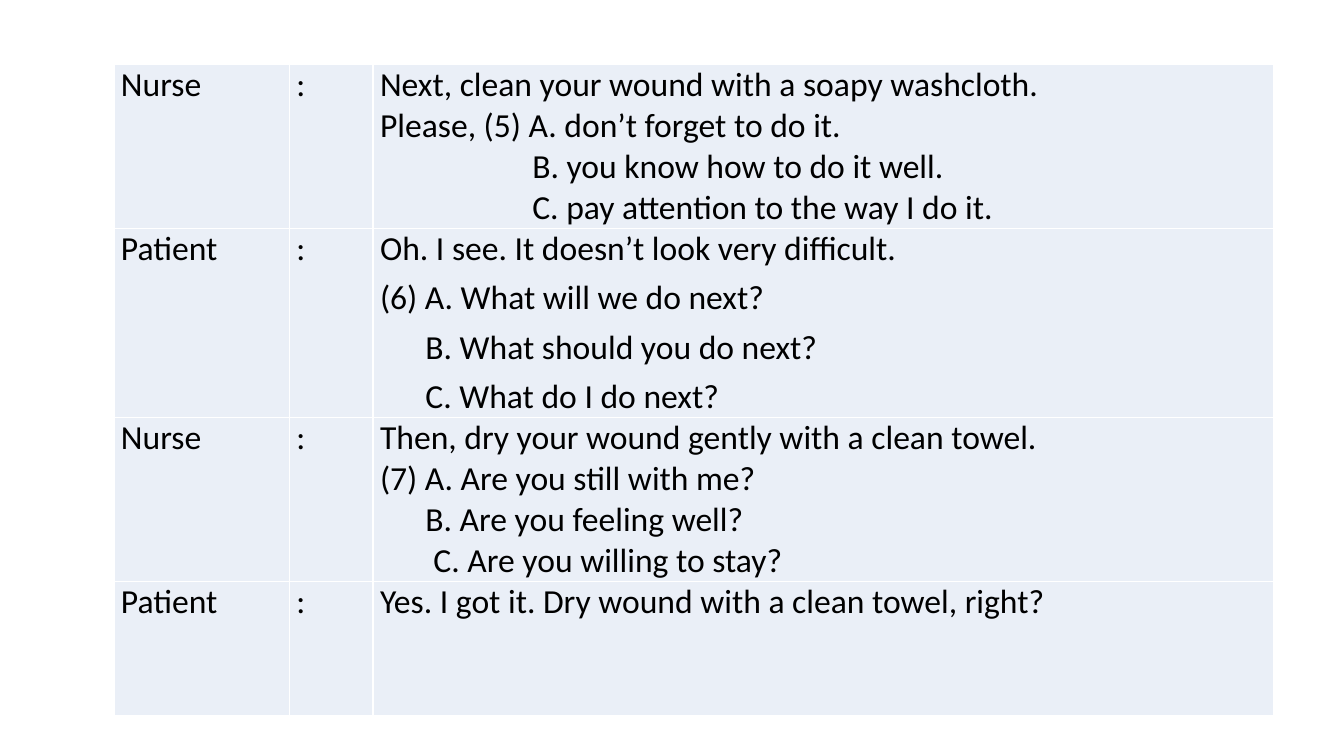
import pptx
import pptx.util
import pptx.dml.color
from pptx.util import Inches, Pt
from lxml import etree
import pptx.oxml.ns

RGBColor = pptx.dml.color.RGBColor
BLACK = RGBColor(0, 0, 0)
WHITE = RGBColor(255, 255, 255)
PALE = RGBColor(0xEA, 0xEF, 0xF7)

WIDTHS = [1.74, 0.83, 8.93]
HEIGHTS = [1.57, 1.85, 1.56, 1.33]
DEEP, STEP = 1.51, 0.45

TALK = [
    ("Nurse", 0, [
        ("Next, clean your wound with a soapy washcloth.", 0),
        ("Please, (5) A. don’t forget to do it.", 0),
        ("B. you know how to do it well.", DEEP),
        ("C. pay attention to the way I do it.", DEEP)]),
    ("Patient", 3, [
        ("Oh. I see. It doesn’t look very difficult.", 0),
        ("(6) A. What will we do next?", 0),
        ("B. What should you do next?", STEP),
        ("C. What do I do next?", STEP)]),
    ("Nurse", 0, [
        ("Then, dry your wound gently with a clean towel.", 0),
        ("(7) A. Are you still with me?", 0),
        ("B. Are you feeling well?", STEP),
        ("C. Are you willing to stay?", 0.53)]),
    ("Patient", 3, [
        ("Yes. I got it. Dry wound with a clean towel, right?", 0)]),
]


class Deck:
    font = "Calibri"
    size = Pt(24)

    def __init__(self):
        self.show = pptx.Presentation()
        self.show.slide_width = Inches(13.33)
        self.show.slide_height = Inches(7.5)
        self.slide = self.show.slides.add_slide(self.show.slide_layouts[6])

    def table(self, left, top, widths, heights):
        frame = self.slide.shapes.add_table(
            len(heights), len(widths), Inches(left), Inches(top),
            Inches(sum(widths)), Inches(sum(heights)))
        grid = frame.table
        grid.first_row = False
        grid.horz_banding = False
        for col, width in zip(grid.columns, widths):
            col.width = Inches(width)
        for row, height in zip(grid.rows, heights):
            row.height = Inches(height)
        return grid

    def border(self, cell):
        props = cell._tc.get_or_add_tcPr()
        qn = pptx.oxml.ns.qn
        for spot, side in enumerate(("a:lnL", "a:lnR", "a:lnT", "a:lnB")):
            line = etree.Element(qn(side), w=str(Pt(1)))
            fill = etree.SubElement(line, qn("a:solidFill"))
            etree.SubElement(fill, qn("a:srgbClr"), val=str(WHITE))
            props.insert(spot, line)

    def cell(self, cell, lines, gap):
        cell.fill.solid()
        cell.fill.fore_color.rgb = PALE
        cell.margin_left = cell.margin_right = Inches(0.07)
        cell.margin_top = cell.margin_bottom = 0
        self.border(cell)
        frame = cell.text_frame
        frame.text = "\n".join(text for text, _ in lines)
        for para, (_, indent) in zip(frame.paragraphs, lines):
            para.font.name = self.font
            para.font.size = self.size
            para.font.color.rgb = BLACK
            para.space_before = para.space_after = Pt(gap)
            para._p.get_or_add_pPr().set("marL", str(Inches(indent)))


def main():
    deck = Deck()
    grid = deck.table(1.13, 0.64, WIDTHS, HEIGHTS)
    for row, (name, gap, lines) in zip(grid.rows, TALK):
        who, mark, words = row.cells
        deck.cell(who, [(name, 0)], 3)
        deck.cell(mark, [(":", 0)], 3)
        deck.cell(words, lines, gap)
    deck.show.save("out.pptx")


if __name__ == "__main__":
    main()
